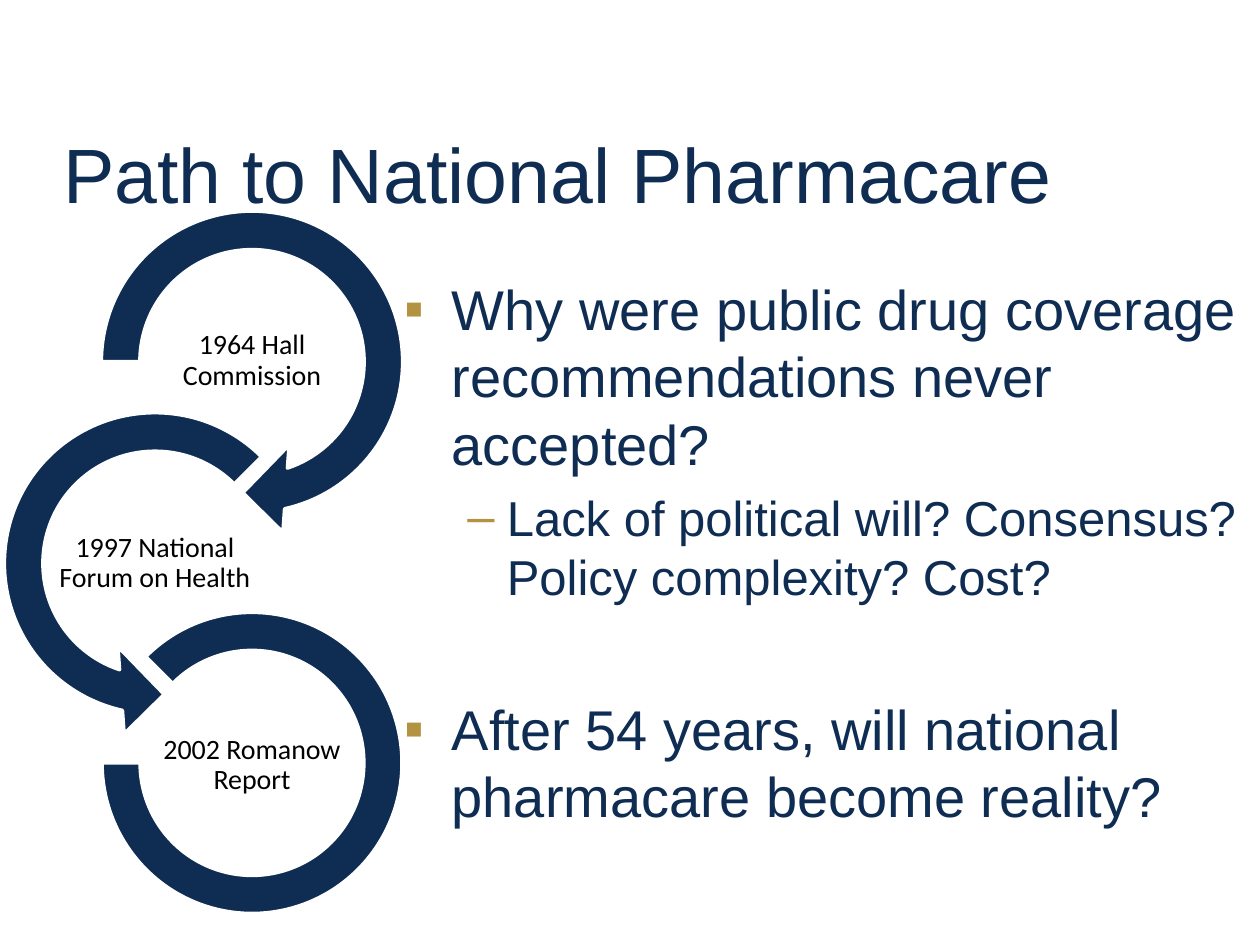
from lxml.etree import SubElement
from pptx import Presentation
from pptx.dml.color import RGBColor
from pptx.enum.shapes import MSO_SHAPE
from pptx.enum.text import MSO_ANCHOR, MSO_AUTO_SIZE, PP_ALIGN
from pptx.oxml.ns import qn
from pptx.util import Pt

COLORS = {"navy": "0F2C52", "gold": "B39242", "white": "FFFFFF", "black": "000000"}

# preset, (left, top, width, height), adjustments, label, label (left, top)
MILESTONES = [
    (MSO_SHAPE.CIRCULAR_ARROW, (43.9, 106.6, 200.2, 200.2),
     (0.11, 11.42, 45, 108, 0.125), "1964 Hall Commission", (88.6, 178.6)),
    (MSO_SHAPE.LEFT_CIRCULAR_ARROW, (-11.5, 221.8, 200.2, 200.2),
     (0.11, 11.42, 63, 189, 0.125), "1997 National Forum on Health", (33.1, 294.5)),
    (MSO_SHAPE.BLOCK_ARC, (58.3, 349.9, 171.4, 172.1),
     (135, 108, 0.127), "2002 Romanow Report", (88.6, 409.7)),
]

# text, level, size, bullet, left margin, hanging indent, space before
QUESTIONS = [
    ("Why were public drug coverage recommendations never accepted?",
     0, 32, "▪", 27, 27, 0),
    ("Lack of political will? Consensus? Policy complexity? Cost?",
     1, 28, "–", 58.5, 22.5, 6.4),
    ("After 54 years, will national pharmacare become reality?",
     0, 32, "▪", 27, 27, 51),
]


def color(name):
    return RGBColor.from_string(COLORS[name])


def place(shape, left, top, width, height):
    shape.left, shape.top = Pt(left), Pt(top)
    shape.width, shape.height = Pt(width), Pt(height)


def add_run(paragraph, text, font_name, size, color_name):
    run = paragraph.add_run()
    run.text = text
    run.font.name = font_name
    run.font.size = Pt(size)
    run.font.color.rgb = color(color_name)


def set_bullet(paragraph, character, margin, hanging):
    properties = paragraph._p.get_or_add_pPr()
    properties.set("marL", str(Pt(margin)))
    properties.set("indent", str(-Pt(hanging)))
    bullet_color = SubElement(properties, qn("a:buClr"))
    SubElement(bullet_color, qn("a:srgbClr"), val=COLORS["gold"])
    SubElement(properties, qn("a:buFont"), typeface="Arial")
    SubElement(properties, qn("a:buChar"), char=character)


def fill_title(title):
    place(title, 36, 59.8, 648, 69.1)
    frame = title.text_frame
    frame.auto_size = MSO_AUTO_SIZE.NONE
    frame.vertical_anchor = MSO_ANCHOR.BOTTOM
    frame.margin_left = frame.margin_right = 0
    paragraph = frame.paragraphs[0]
    paragraph.alignment = PP_ALIGN.LEFT
    add_run(paragraph, "Path to National Pharmacare", "Arial", 44, "navy")


def fill_questions(body):
    place(body, 223.9, 153.4, 496.1, 295.2)
    frame = body.text_frame
    frame.auto_size = MSO_AUTO_SIZE.NONE
    for index, (text, level, size, bullet, margin, hanging, before) in enumerate(QUESTIONS):
        paragraph = frame.add_paragraph() if index else frame.paragraphs[0]
        paragraph.level = level
        set_bullet(paragraph, bullet, margin, hanging)
        paragraph.space_before = Pt(before)
        add_run(paragraph, text, "Arial", size, "navy")


def add_ring(slide, preset, box, adjustments):
    ring = slide.shapes.add_shape(preset, *map(Pt, box))
    for index, value in enumerate(adjustments):
        ring.adjustments[index] = value
    ring.shadow.inherit = False
    ring.fill.solid()
    ring.fill.fore_color.rgb = color("navy")
    ring.line.color.rgb = color("white")
    ring.line.width = Pt(2)


def add_label(slide, text, left, top):
    label = slide.shapes.add_textbox(Pt(left), Pt(top), Pt(110.9), Pt(55.4))
    frame = label.text_frame
    frame.word_wrap = True
    frame.vertical_anchor = MSO_ANCHOR.MIDDLE
    frame.margin_left = frame.margin_right = Pt(0.8)
    frame.margin_top = frame.margin_bottom = Pt(0.8)
    paragraph = frame.paragraphs[0]
    paragraph.alignment = PP_ALIGN.CENTER
    paragraph.line_spacing = 0.9
    add_run(paragraph, text, "Calibri", 16, "black")


def main():
    presentation = Presentation()
    presentation.slide_width, presentation.slide_height = Pt(720), Pt(540)
    slide = presentation.slides.add_slide(presentation.slide_layouts[1])
    fill_title(slide.shapes.title)
    fill_questions(slide.placeholders[1])
    for preset, box, adjustments, text, position in MILESTONES:
        add_ring(slide, preset, box, adjustments)
        add_label(slide, text, *position)
    presentation.save("out.pptx")


if __name__ == "__main__":
    main()
